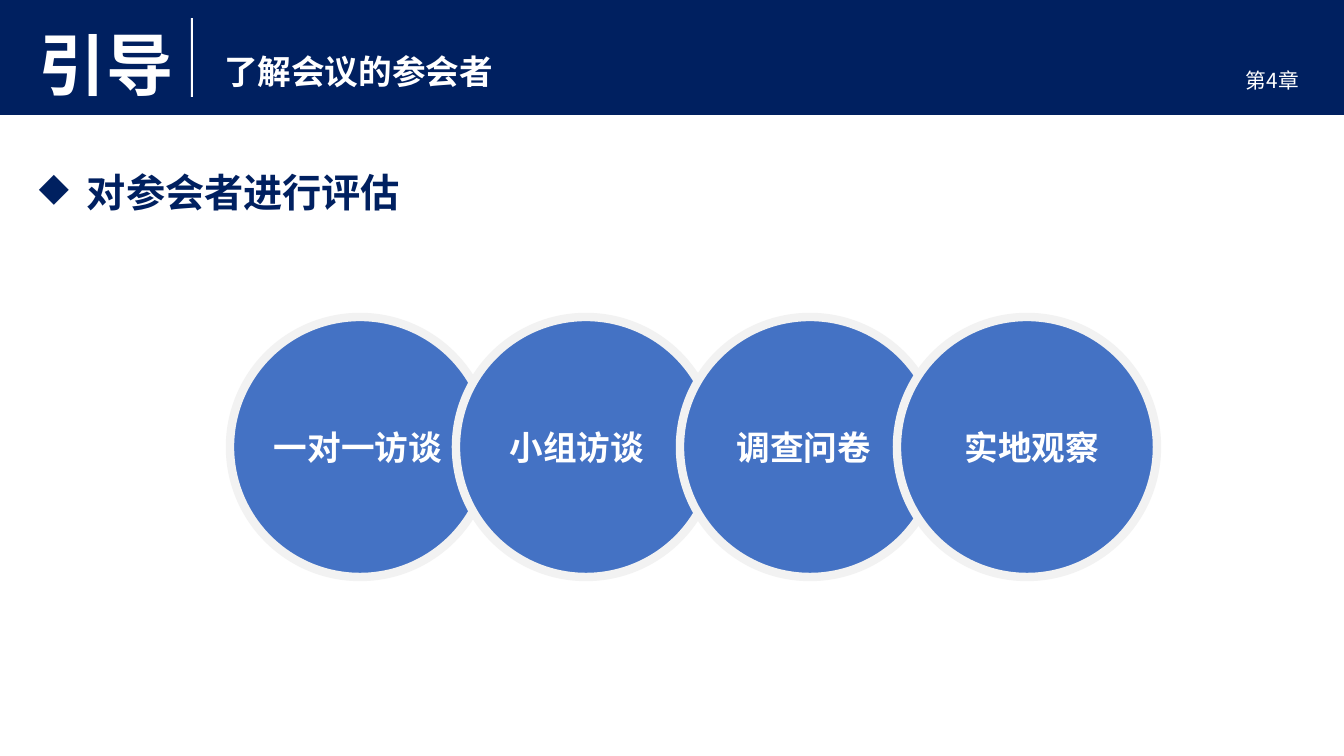
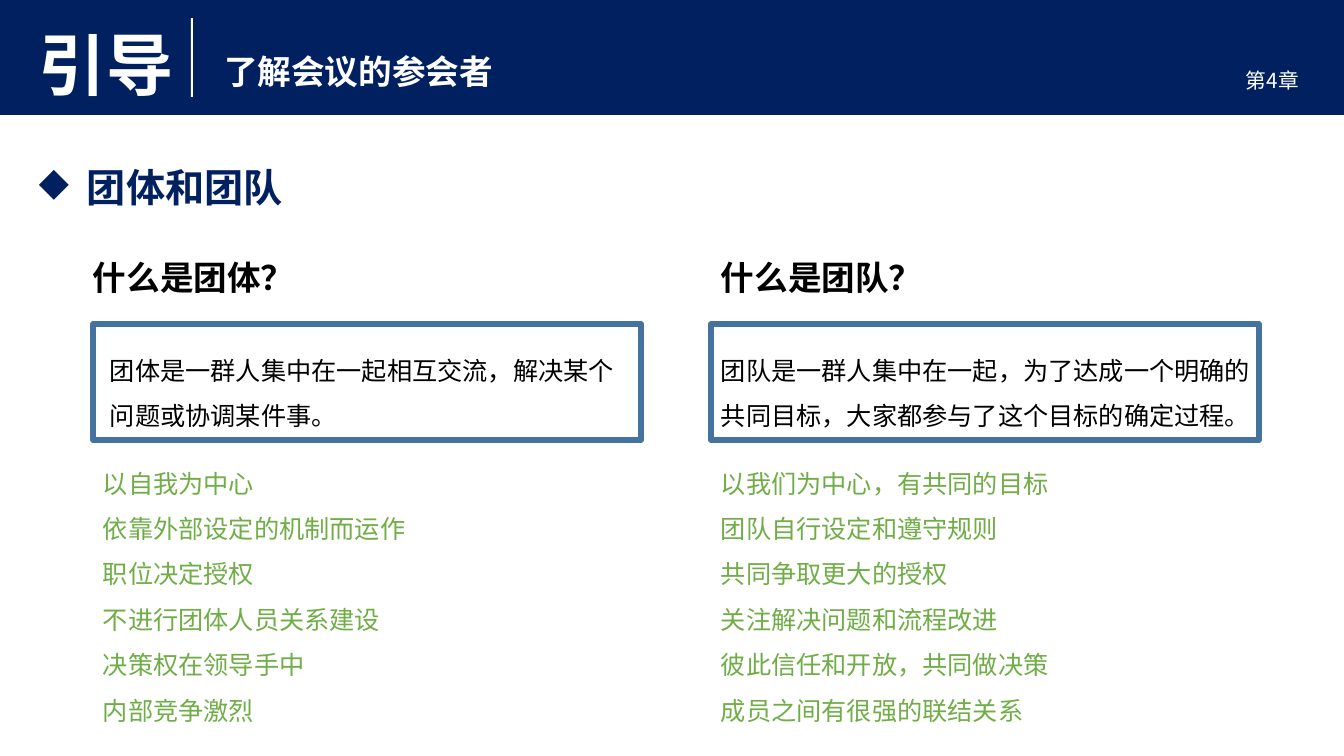
"""Build two slides on assessing participants and telling groups from teams."""
from lxml.etree import SubElement
from pptx import Presentation
from pptx.dml.color import RGBColor
from pptx.enum.shapes import MSO_SHAPE as SHAPE
from pptx.enum.text import MSO_ANCHOR as ANCHOR, MSO_AUTO_SIZE as AUTO, PP_ALIGN as ALIGN
from pptx.oxml.ns import qn
from pptx.util import Emu, Pt

PX = 914400 / 100.8
COLORS = {
    "navy": "002060", "white": "FFFFFF", "blue": "4472C4", "pale": "F2F2F2",
    "frame": "43739E", "green": "70AD47", "black": "000000",
}
SC, JP = "Noto Sans CJK SC", "Noto Sans CJK JP"


def add_block(slide, kind, left, top, width, height, fill=None, line=None, weight=0):
    """Add a shape with the given fill and outline, sized in px."""
    block = slide.shapes.add_shape(kind, *(Emu(round(v * PX)) for v in (left, top, width, height)))
    block.shadow.inherit = False
    if fill:
        block.fill.solid()
        block.fill.fore_color.rgb = RGBColor.from_string(COLORS[fill])
    else:
        block.fill.background()
    if line:
        block.line.color.rgb = RGBColor.from_string(COLORS[line])
        block.line.width = Pt(weight)
    else:
        block.line.fill.background()
    return block


def write(holder, lines, size, color, font=JP, bold=False, box=None,
          align=ALIGN.LEFT, anchor=ANCHOR.MIDDLE, pitch=None):
    """Fill a shape with styled paragraphs, placing it first if a px box is given."""
    if box:
        holder.left, holder.top, holder.width, holder.height = (Emu(round(v * PX)) for v in box)
    frame = holder.text_frame
    frame.word_wrap = True
    frame.auto_size = AUTO.NONE
    frame.vertical_anchor = anchor
    frame.text = "\n".join(lines)
    for paragraph in frame.paragraphs:
        paragraph.alignment = align
        if pitch:
            paragraph.line_spacing = Pt(pitch)
        paragraph.font.size = Pt(size)
        paragraph.font.bold = bold
        paragraph.font.color.rgb = RGBColor.from_string(COLORS[color])
        paragraph.font.name = font
        run_defaults = paragraph._p.pPr.find(qn("a:defRPr"))
        SubElement(run_defaults, qn("a:ea")).set("typeface", font)
    return frame


deck = Presentation()
deck.slide_width, deck.slide_height = Emu(round(1344 * PX)), Emu(round(756 * PX))
layout = deck.slide_layouts[5]
assessment, comparison = (deck.slides.add_slide(layout) for _ in range(2))

band = add_block(assessment, SHAPE.RECTANGLE, 0, 0, 1344, 115, "navy")
divider = add_block(assessment, SHAPE.RECTANGLE, 191, 18, 2, 79, "white")
section = assessment.shapes.add_textbox(0, 0, 0, 0)
write(section, ["引导"], 48, "white", SC, True, (29, 18, 160, 92))
chapter = assessment.shapes.add_textbox(0, 0, 0, 0)
write(chapter, ["第4章"], 14.8, "white", box=(1236, 65, 74, 40), anchor=ANCHOR.TOP, pitch=16)
for number, part in enumerate((band, divider, section, chapter), 100):
    part._element.nvSpPr.cNvPr.set("id", str(number))
    layout.shapes._spTree.append(part._element)

for slide, topic, topic_top in (
    (assessment, "对参会者进行评估", 163),
    (comparison, "团体和团队", 158),
):
    write(slide.shapes.title, ["了解会议的参会者"], 24, "white", bold=True, box=(214, 46, 400, 50))
    heading = write(slide.shapes.add_textbox(0, 0, 0, 0), [topic], 28, "navy",
                    bold=True, box=(29, topic_top, 500, 57))
    properties = heading.paragraphs[0]._p.pPr
    properties.set("marL", str(round(48 * PX)))
    properties.set("indent", str(round(-48 * PX)))
    bullet = properties.makeelement(qn("a:buChar"), {"char": "◆"})
    properties.find(qn("a:defRPr")).addprevious(bullet)

for method, left, shift in (
    ("一对一访谈", 230, -2),
    ("小组访谈", 456, -9),
    ("调查问卷", 680, -6),
    ("实地观察", 897, 5),
):
    circle = add_block(assessment, SHAPE.OVAL, left, 317, 260, 260, "blue", "pale", 6)
    label = write(circle, [method], 24, "white", bold=True, align=ALIGN.CENTER)
    label.margin_left = Emu(round(max(2 * shift, 0) * PX))
    label.margin_right = Emu(round(max(-2 * shift, 0) * PX))

columns = (
    ("什么是团体？", 83, 93, 100, 93,
     ["团体是一群人集中在一起相互交流，解决某个", "问题或协调某件事。"],
     ["以自我为中心", "依靠外部设定的机制而运作", "职位决定授权",
      "不进行团体人员关系建设", "决策权在领导手中", "内部竞争激烈"]),
    ("什么是团队？", 711, 711, 711, 711,
     ["团队是一群人集中在一起，为了达成一个明确的", "共同目标，大家都参与了这个目标的确定过程。"],
     ["以我们为中心，有共同的目标", "团队自行设定和遵守规则", "共同争取更大的授权",
      "关注解决问题和流程改进", "彼此信任和开放，共同做决策", "成员之间有很强的联结关系"]),
)
for question, question_left, frame_left, meaning_left, traits_left, meaning, traits in columns:
    add_block(comparison, SHAPE.RECTANGLE, frame_left, 324, 548, 116, line="frame", weight=4)
    for lines, size, color, font, bold, box, anchor, pitch in (
        ([question], 24, "black", JP, True, (question_left, 252, 300, 50), ANCHOR.MIDDLE, None),
        (meaning, 18, "black", SC, False, (meaning_left, 335, 570, 102), ANCHOR.TOP, 32.4),
        (traits, 18, "green", SC, False, (traits_left, 448, 548, 285), ANCHOR.TOP, 32.4),
    ):
        write(comparison.shapes.add_textbox(0, 0, 0, 0), lines, size, color, font, bold, box,
              anchor=anchor, pitch=pitch)

deck.save("out.pptx")
